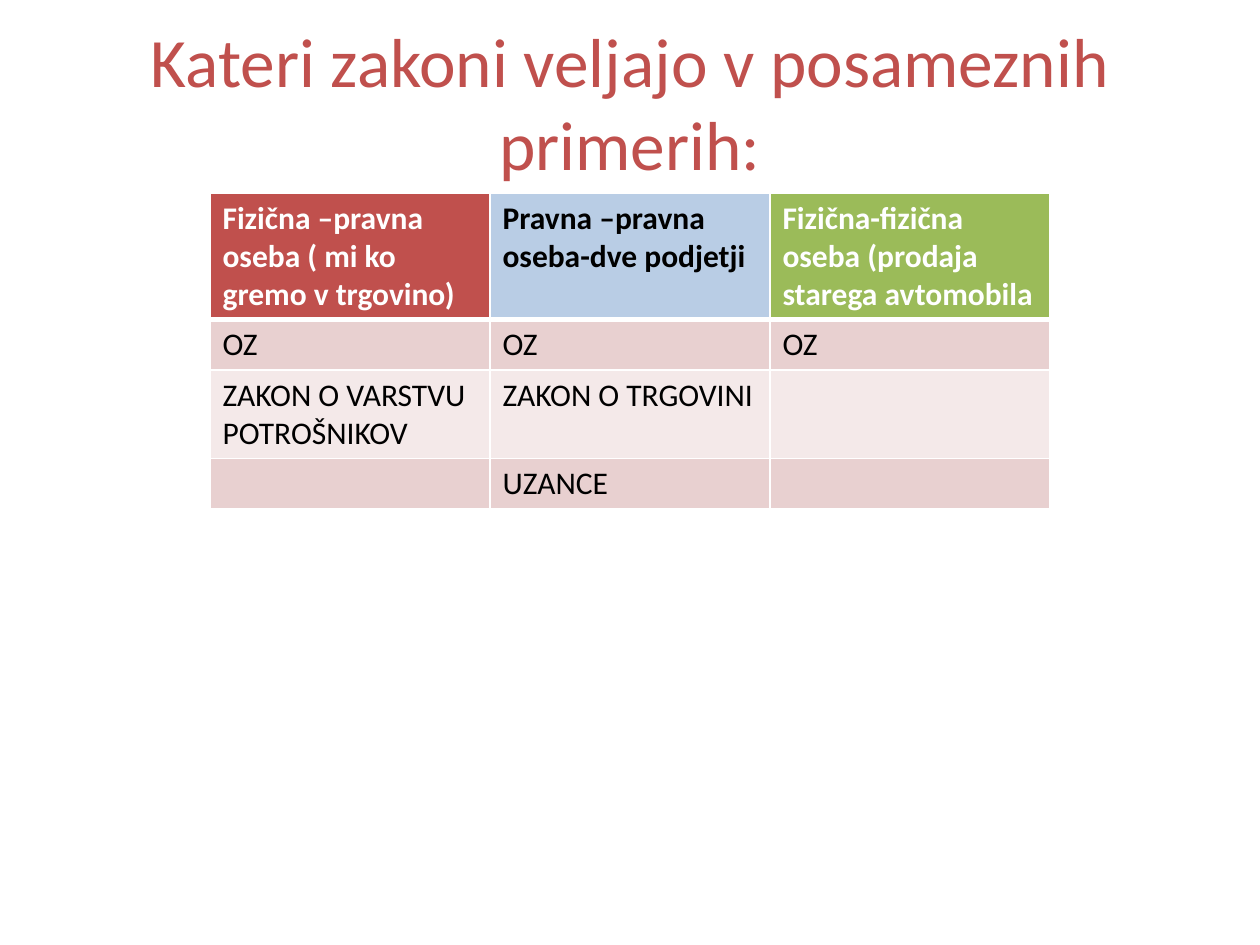
from lxml.etree import SubElement as add_element
from pptx import Presentation
from pptx.dml.color import RGBColor as Color
from pptx.enum.text import MSO_ANCHOR as Anchor, PP_ALIGN as Align
from pptx.oxml.ns import qn
from pptx.util import Inches, Pt

COLORS = {
    "red": "C0504D", "blue": "B9CDE5", "green": "9BBB59",
    "band": "E8D0D0", "pale": "F4E9E9", "white": "FFFFFF", "black": "000000",
}
TITLE = "Kateri zakoni veljajo v posameznih primerih:"
HEADERS = [
    ("Fizična –pravna oseba ( mi ko gremo v trgovino)", "red", "white"),
    ("Pravna –pravna oseba-dve podjetji", "blue", "black"),
    ("Fizična-fizična oseba (prodaja starega avtomobila", "green", "white"),
]
LAWS = [
    ["OZ", "OZ", "OZ"],
    ["ZAKON O VARSTVU POTROŠNIKOV", "ZAKON O TRGOVINI", ""],
    ["", "UZANCE", ""],
]
ROW_SHARES = [0.4, 0.16, 0.28, 0.16]
TITLE_FORMAT = {"name": "Calibri", "size": Pt(39.6), "bold": False}
HEADER_FORMAT = {"name": "Calibri", "size": Pt(18), "bold": True}
BODY_FORMAT = {**HEADER_FORMAT, "bold": False}


def color(name):
    return Color.from_string(COLORS[name])


def write(frame, text, formats, ink):
    para = frame.paragraphs[0]
    para.text = text
    for target in [para.font, *(span.font for span in para.runs)]:
        for key, value in formats.items():
            setattr(target, key, value)
        target.color.rgb = color(ink)
    return para


def draw_borders(cell, bottom, top):
    properties = cell._tc.get_or_add_tcPr()
    for side, width in {"L": 1, "R": 1, "T": top, "B": bottom}.items():
        line = add_element(properties, qn(f"a:ln{side}"), w=str(Pt(width)))
        fill = add_element(line, qn("a:solidFill"))
        add_element(fill, qn("a:srgbClr"), val=COLORS["white"])


def add_title(page, left, top, width, height):
    frame = page.shapes.add_textbox(left, top, width, height).text_frame
    frame.word_wrap = True
    frame.vertical_anchor = Anchor.MIDDLE
    write(frame, TITLE, TITLE_FORMAT, "red").alignment = Align.CENTER


def add_law_table(page, left, top, width, height):
    bands = [
        [(text, "pale" if index % 2 else "band", "black") for text in row]
        for index, row in enumerate(LAWS)
    ]
    rows = [HEADERS, *bands]
    table = page.shapes.add_table(
        len(rows), len(HEADERS), left, top, width, height
    ).table
    for column in table.columns:
        column.width = int(width / len(HEADERS))
    for index, row in enumerate(rows):
        table.rows[index].height = int(height * ROW_SHARES[index])
        formats = BODY_FORMAT if index else HEADER_FORMAT
        for position, (text, fill, ink) in enumerate(row):
            cell = table.cell(index, position)
            draw_borders(cell, 1 if index else 3, 3 if index == 1 else 1)
            cell.fill.solid()
            cell.fill.fore_color.rgb = color(fill)
            write(cell.text_frame, text, formats, ink)


def main():
    deck = Presentation()
    deck.slide_width, deck.slide_height = Inches(10), Inches(7.5)
    page = deck.slides.add_slide(deck.slide_layouts[6])
    wide, high = deck.slide_width, deck.slide_height
    add_title(page, int(wide * 0.05), int(high * 0.04),
              int(wide * 0.9), Inches(1.01))
    add_law_table(page, int(wide / 6), Inches(1.53),
                  int(wide * 2 / 3), Inches(2.51))
    deck.save("out.pptx")


if __name__ == "__main__":
    main()
